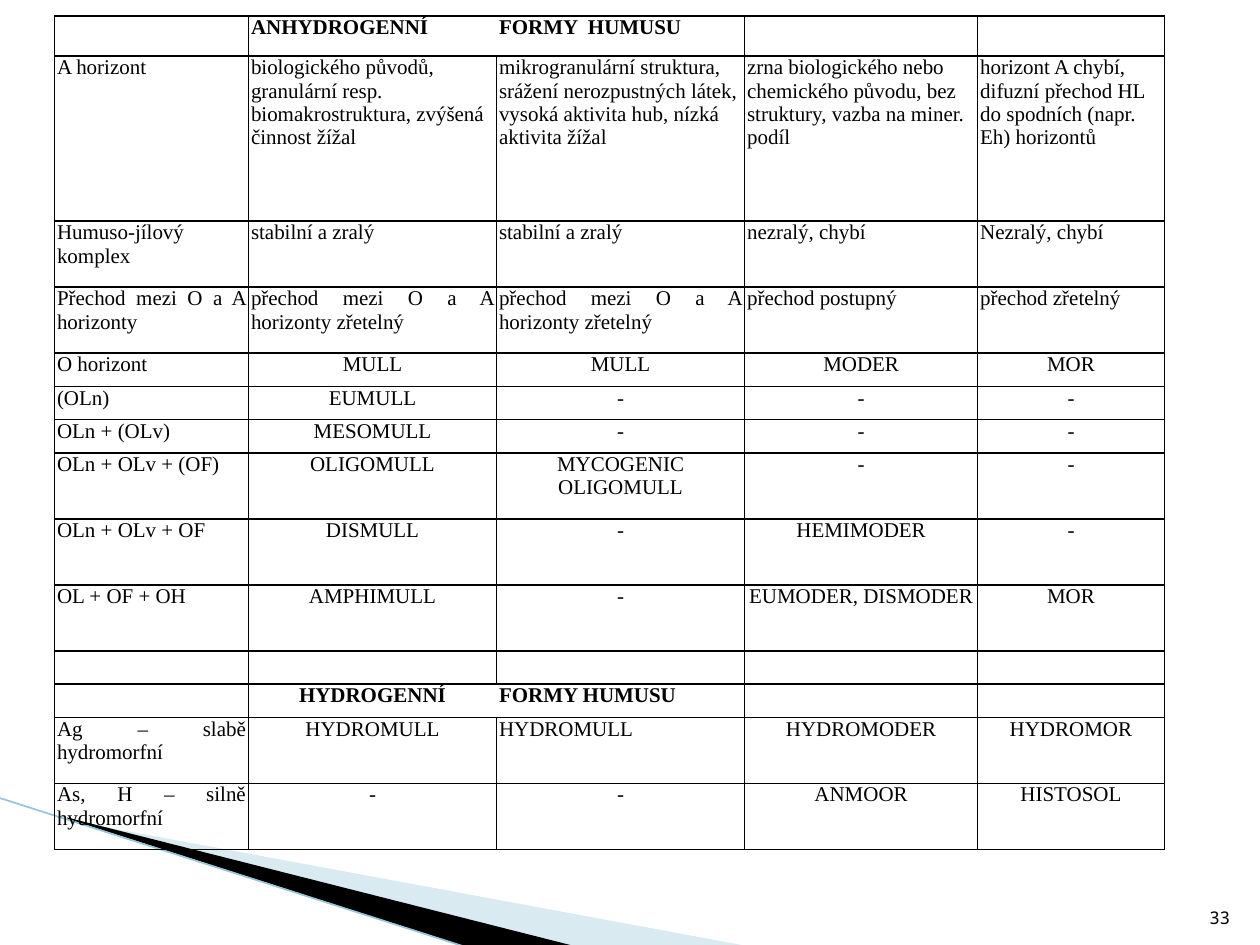
from lxml import etree
from pptx import Presentation, util as u
from pptx.dml.color import RGBColor
from pptx.enum import text
from pptx.oxml import parse_xml
from pptx.oxml.ns import nsdecls, qn

Cm, Pt = u.Cm, u.Pt
BLACK = RGBColor(0x00, 0x00, 0x00)
PALE = RGBColor(0xA0, 0xCB, 0xDC)
EDGE = RGBColor(0x97, 0xC5, 0xD8)
SERIF, MONO = "Times New Roman", "Noto Sans Mono"

AL = text.PP_ALIGN
ALIGN = {"l": AL.LEFT, "c": AL.CENTER, "j": AL.JUSTIFY, "r": AL.RIGHT}
WIDTHS = [3.91, 5, 5, 4.7, 3.76]
LOW, HIGH = 0.67, 1.33
TITLES = (0, 11)

ROWS = [
    (0.81, "jllll", ["", "ANHYDROGENNÍ", "FORMY  HUMUSU", "", ""]),
    (3.33, "jllll", [
        "A horizont",
        "biologického původů, granulární resp. biomakrostruktura, zvýšená činnost žížal",
        "mikrogranulární struktura, srážení nerozpustných látek, vysoká aktivita hub, nízká aktivita žížal",
        "zrna biologického nebo chemického původu, bez struktury, vazba na miner. podíl",
        "horizont A chybí, difuzní přechod HL do spodních (napr. Eh) horizontů"]),
    (HIGH, "jjjjj", ["Humuso-jílový komplex", "stabilní a zralý", "stabilní a zralý",
                     "nezralý, chybí", "Nezralý, chybí"]),
    (HIGH, "jjjjj", ["Přechod mezi O a A horizonty", "přechod mezi O a A horizonty zřetelný",
                     "přechod mezi O a A horizonty zřetelný", "přechod postupný",
                     "přechod zřetelný"]),
    (LOW, "jcccc", ["O horizont", "MULL", "MULL", "MODER", "MOR"]),
    (LOW, "jcccc", ["(OLn)", "EUMULL", "-", "-", "-"]),
    (LOW, "jcccc", ["OLn + (OLv)", "MESOMULL", "-", "-", "-"]),
    (HIGH, "jcccc", ["OLn + OLv + (OF)", "OLIGOMULL", "MYCOGENIC OLIGOMULL", "-", "-"]),
    (HIGH, "jcccc", ["OLn + OLv + OF", "DISMULL", "-", "HEMIMODER", "-"]),
    (HIGH, "jcccc", ["OL + OF + OH", "AMPHIMULL", "-", "EUMODER, DISMODER", "MOR"]),
    (LOW, "jcccc", ["", "", "", "", ""]),
    (LOW, "jclcc", ["", "HYDROGENNÍ", "FORMY HUMUSU", "", ""]),
    (HIGH, "jcjcc", ["Ag – slabě hydromorfní", "HYDROMULL", "HYDROMULL", "HYDROMODER", "HYDROMOR"]),
    (HIGH, "jcccc", ["As, H – silně hydromorfní", "-", "-", "ANMOOR", "HISTOSOL"]),
]

WEDGES = [
    (PALE, 40, [(1.4, 16.54), (15.11, 19.08), (11.58, 19.08), (1.4, 16.51)]),
    (BLACK, 100, [(1.35, 16.48), (11.61, 19.08), (9.45, 19.1), (1.37, 16.51)]),
]


def apply(obj, vals):
    for key, val in vals.items():
        setattr(obj, key, val)


def write(para, words, size, face, bold, side):
    para.alignment = ALIGN[side]
    if words:
        run = para.add_run()
        run.text = words
        apply(run.font, {"size": Pt(size), "name": face, "bold": bold})
        run.font.color.rgb = BLACK
    else:
        end = etree.SubElement(para._p, qn("a:endParaRPr"))
        end.set("sz", str(size * 100))


def border(cell, blank):
    props = cell._tc.get_or_add_tcPr()
    for spot, tag in enumerate(("lnL", "lnR", "lnT", "lnB")):
        fill = ("<a:noFill/>" if tag == blank else
                f'<a:solidFill><a:srgbClr val="{BLACK}"/></a:solidFill>')
        props.insert(spot, parse_xml(
            f'<a:{tag} {nsdecls("a")} w="{Pt(1)}">{fill}</a:{tag}>'))


def wedge(shapes, color, alpha, spots):
    pts = [(Cm(x), Cm(y)) for x, y in spots]
    form = shapes.build_freeform(*pts[0])
    form.add_line_segments(pts[1:], close=True)
    shape = form.convert_to_shape()
    shape.shadow.inherit = False
    shape.line.fill.background()
    shape.fill.solid()
    shape.fill.fore_color.rgb = color
    if alpha < 100:
        tint = shape._element.spPr.find(".//" + qn("a:srgbClr"))
        etree.SubElement(tint, qn("a:alpha")).set("val", str(alpha * 1000))


def grid(shapes):
    tall = sum(row[0] for row in ROWS)
    table = shapes.add_table(len(ROWS), len(WIDTHS), Cm(1.1), Cm(0.32),
                             Cm(sum(WIDTHS)), Cm(tall)).table
    apply(table, {"first_row": False, "horz_banding": False})
    for col, wide in zip(table.columns, WIDTHS):
        col.width = Cm(wide)
    for r, (high, sides, words) in enumerate(ROWS):
        table.rows[r].height = Cm(high)
        for c, word in enumerate(words):
            cell = table.cell(r, c)
            apply(cell, {"margin_left": Cm(0.05), "margin_right": Cm(0.05),
                         "margin_top": 0, "margin_bottom": 0})
            cell.fill.background()
            border(cell, {1: "lnR", 2: "lnL"}.get(c) if r in TITLES else None)
            write(cell.text_frame.paragraphs[0], word, 12, SERIF, r in TITLES, sides[c])


def main():
    prs = Presentation()
    apply(prs, {"slide_width": Cm(25.4), "slide_height": Cm(19.05)})
    shapes = prs.slides.add_slide(prs.slide_layouts[6]).shapes
    for item in WEDGES:
        wedge(shapes, *item)
    edge = shapes.add_connector(1, Cm(-0.03), Cm(16.08), Cm(9.42), Cm(19.1))
    edge.line.color.rgb = EDGE
    edge.line.width = Pt(0.95)
    etree.SubElement(edge._element.spPr, qn("a:effectLst"))
    grid(shapes)
    frame = shapes.add_textbox(Cm(24.03), Cm(17.81), Cm(1.02), Cm(1.02)).text_frame
    apply(frame, {"word_wrap": True, "vertical_anchor": text.MSO_ANCHOR.BOTTOM})
    write(frame.paragraphs[0], "33", 10, MONO, False, "r")
    prs.save("out.pptx")


if __name__ == "__main__":
    main()
